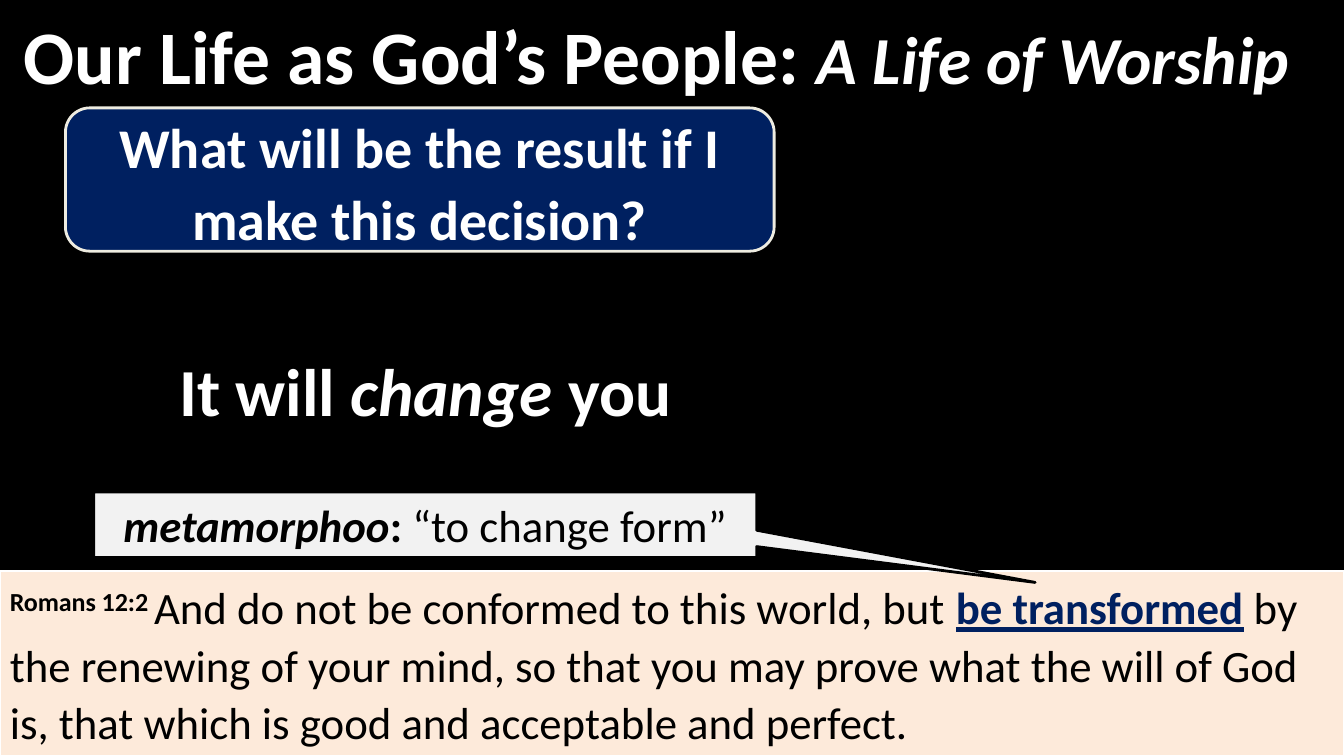
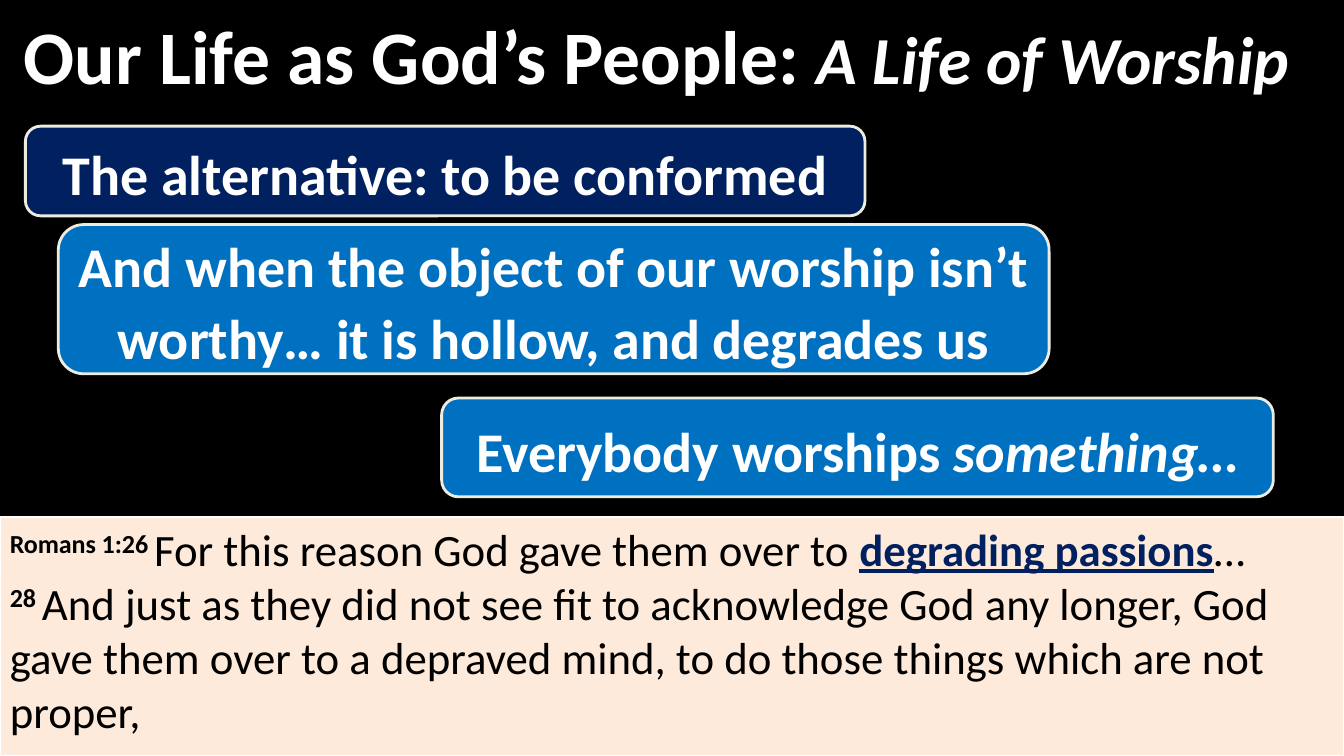
from dataclasses import dataclass, replace
from typing import Optional

from pptx import Presentation
from pptx.dml.color import RGBColor
from pptx.enum import shapes, text
from pptx.util import Cm, Pt

WIDTH, HEIGHT = 33.87, 19.05
FONT = "Calibri"
BLACK, WHITE = "000000", "FFFFFF"
NAVY, BLUE = "002060", "0070C0"
CREAM, PEACH, PALE_GREY = "EEECE1", "FDEADA", "F2F2F2"

RECTANGLE = shapes.MSO_SHAPE.RECTANGLE
SPEECH = shapes.MSO_SHAPE.RECTANGULAR_CALLOUT
ROUND_SPEECH = shapes.MSO_SHAPE.ROUNDED_RECTANGULAR_CALLOUT
LEFT, CENTER = text.PP_ALIGN.LEFT, text.PP_ALIGN.CENTER
TOP, MIDDLE = text.MSO_ANCHOR.TOP, text.MSO_ANCHOR.MIDDLE


@dataclass(frozen=True)
class Span:
    words: str
    size: float = 32
    color: str = BLACK
    bold: bool = False
    italic: bool = False
    underline: bool = False
    raised: bool = False


@dataclass(frozen=True)
class Box:
    """A shape with text; lengths in centimetres, one tuple of spans a paragraph."""
    left: float
    top: float
    width: float
    height: float
    paras: tuple[tuple[Span, ...], ...]
    fill: Optional[str] = None
    line: Optional[str] = None
    line_width: float = 2
    kind: shapes.MSO_SHAPE = ROUND_SPEECH
    pointer: tuple[float, ...] = (-0.22, 0.5, 0.17)
    align: text.PP_ALIGN = CENTER
    anchor: text.MSO_ANCHOR = MIDDLE
    spacing: float = 1.07
    indent: float = 0.25


def rgb(value: str) -> RGBColor:
    return RGBColor.from_string(value)


def strong(words: str, size: float = 40, italic: bool = False) -> Span:
    return Span(words, size, WHITE, bold=True, italic=italic)


def verse(words: str) -> Span:
    return Span(words, bold=True, raised=True)


def key_phrase(words: str) -> Span:
    return Span(words, color=NAVY, bold=True, underline=True)


def scripture(height: float, *paras: tuple[Span, ...], spacing: float = 1) -> Box:
    """Full-width Bible passage standing on the bottom edge."""
    return Box(0, HEIGHT - height, WIDTH, height, paras, PEACH, WHITE, 1.5,
               RECTANGLE, (), LEFT, TOP, spacing)


TITLE = Box(0, 0, WIDTH, 2.72,
            ((strong("Our Life as God’s People: ", 54),
              strong("A Life of Worship", 48, italic=True)),),
            BLACK, kind=RECTANGLE, pointer=(), align=LEFT, spacing=1, indent=0.6)

QUESTION = Box(1.65, 2.72, 17.86, 3.61,
               ((strong("What will be the result if I make this decision?"),),),
               NAVY, CREAM)

PAGES: tuple[tuple[Box, ...], ...] = (
    (
        TITLE,
        QUESTION,
        scripture(4.65, (
            verse("Romans 12:2 "),
            Span("And do not be conformed to this world, but "),
            key_phrase("be transformed"),
            Span(" by the renewing of your mind, so that you may prove what "
                 "the will of God is, that which is good and acceptable and perfect."),
        ), spacing=1.07),
        Box(1.65, 8.51, 18.14, 2.49,
            ((strong("It will ", 48), strong("change", 48, italic=True),
              strong(" you", 48)),)),
        Box(2.36, 12.4, 16.71, 1.65,
            ((Span("metamorphoo", bold=True, italic=True), Span(": ", bold=True),
              Span("“to change form”")),),
            PALE_GREY, BLACK, kind=SPEECH, pointer=(0.92, 0.88), spacing=1),
    ),
    (
        TITLE,
        scripture(6.02, (
            verse("Romans 1:26 "),
            Span("For this reason God gave them over to "),
            key_phrase("degrading passions"),
            Span("…"),
        ), (
            verse("28 "),
            Span("And just as they did not see fit to acknowledge God any longer, "
                 "God gave them over to a depraved mind, to do those things "
                 "which are not proper,"),
        )),
        replace(QUESTION, left=0.64, top=3.18, width=21.16, height=2.26,
                paras=((strong("The alternative: to be conformed"),),)),
        replace(QUESTION, left=1.47, top=5.66, width=24.97, height=3.76, fill=BLUE,
                paras=((strong("And when the object of our worship isn’t worthy… "
                               "it is hollow, and degrades us"),),)),
        replace(QUESTION, left=11.13, top=10.03, width=20.96, height=2.49, fill=BLUE,
                paras=((strong("Everybody worships "),
                        strong("something…", italic=True)),)),
    ),
)


def add_span(para, span: Span) -> None:
    run = para.add_run()
    run.text = span.words
    font = run.font
    font.name, font.size = FONT, Pt(span.size)
    font.bold, font.italic, font.underline = span.bold, span.italic, span.underline
    font.color.rgb = rgb(span.color)
    if span.raised:
        run._r.get_or_add_rPr().set("baseline", "30000")


def add_box(page, box: Box) -> None:
    shape = page.shapes.add_shape(box.kind, Cm(box.left), Cm(box.top),
                                  Cm(box.width), Cm(box.height))
    shape.shadow.inherit = False
    for index, value in enumerate(box.pointer):
        shape.adjustments[index] = value
    if box.fill:
        shape.fill.solid()
        shape.fill.fore_color.rgb = rgb(box.fill)
    else:
        shape.fill.background()
    if box.line:
        shape.line.color.rgb = rgb(box.line)
        shape.line.width = Pt(box.line_width)
    else:
        shape.line.fill.background()

    frame = shape.text_frame
    frame.word_wrap = True
    frame.vertical_anchor = box.anchor
    frame.margin_left = Cm(box.indent)
    for index, spans in enumerate(box.paras):
        para = frame.add_paragraph() if index else frame.paragraphs[0]
        para.alignment = box.align
        para.line_spacing = box.spacing
        for span in spans:
            add_span(para, span)


def main() -> None:
    deck = Presentation()
    deck.slide_width, deck.slide_height = Cm(WIDTH), Cm(HEIGHT)
    for boxes in PAGES:
        page = deck.slides.add_slide(deck.slide_layouts[6])
        page.background.fill.solid()
        page.background.fill.fore_color.rgb = rgb(BLACK)
        for box in boxes:
            add_box(page, box)
    deck.save("out.pptx")


if __name__ == "__main__":
    main()
